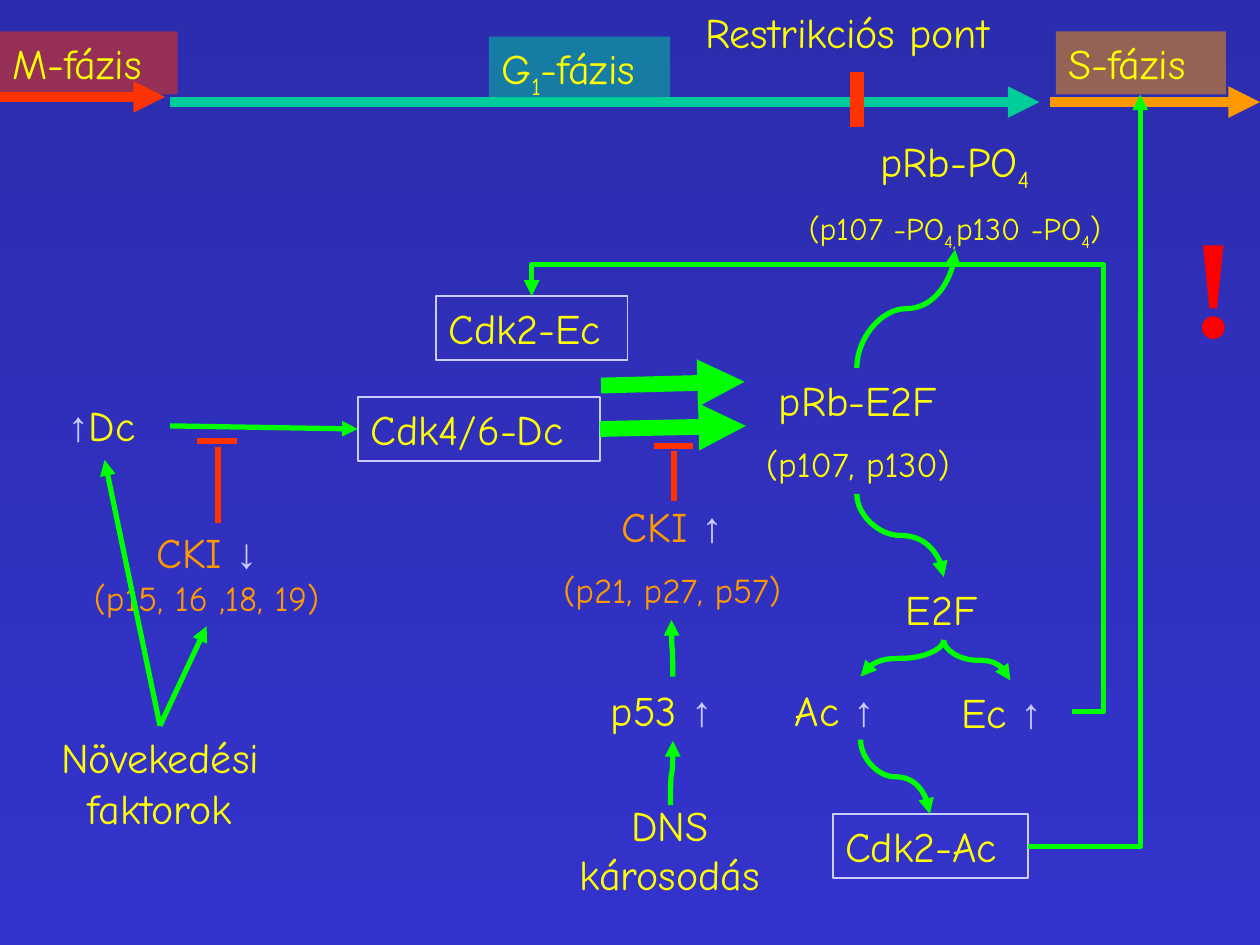
from lxml.etree import SubElement
from pptx import Presentation
from pptx.dml.color import RGBColor
from pptx.enum.shapes import MSO_CONNECTOR, MSO_SHAPE
from pptx.enum.text import MSO_ANCHOR, MSO_AUTO_SIZE, PP_ALIGN
from pptx.oxml.ns import qn
from pptx.util import Inches, Pt

YELLOW = RGBColor(0xFF, 0xFF, 0x00)
ORANGE = RGBColor(0xFF, 0x99, 0x00)
LAVENDER = RGBColor(0xCC, 0xCC, 0xFF)
GREEN = RGBColor(0x00, 0xFF, 0x00)
TEAL = RGBColor(0x00, 0xCC, 0x99)
VERMILION = RGBColor(0xFF, 0x33, 0x00)
RED = RGBColor(0xFF, 0x00, 0x00)
NIGHT_BLUE = RGBColor(0x2C, 0x2C, 0xAE)
BLUE = RGBColor(0x33, 0x33, 0xCC)

LEFT, CENTER = PP_ALIGN.LEFT, PP_ALIGN.CENTER
SUBSCRIPTS = ("1", "4", "4,")

presentation = Presentation()
presentation.slide_width = Inches(10)
presentation.slide_height = Inches(7.5)
slide = presentation.slides.add_slide(presentation.slide_layouts[6])

background = slide.background.fill
background.gradient()
background.gradient_angle = 270
for stop, color in zip(background.gradient_stops, (NIGHT_BLUE, BLUE)):
    stop.color.rgb = color


def write(shape, lines, color=YELLOW, align=LEFT, wrap=False, gap=0.5):
    """Fill a shape with (size, segments) lines; gap is in font heights.

    Up and down arrows turn lavender, the segments in SUBSCRIPTS are lowered.
    """
    frame = shape.text_frame
    frame.word_wrap = wrap
    frame.auto_size = MSO_AUTO_SIZE.SHAPE_TO_FIT_TEXT
    frame.vertical_anchor = MSO_ANCHOR.TOP
    for index, (size, segments) in enumerate(lines):
        paragraph = frame.add_paragraph() if index else frame.paragraphs[0]
        paragraph.alignment = align
        if index:
            paragraph.space_before = Pt(size * gap)
        for segment in segments:
            run = paragraph.add_run()
            run.text = segment
            is_arrow = segment in ("↑", "↓")
            run.font.size = Pt(size)
            run.font.name = "Arial" if is_arrow else "Comic Neue"
            run.font.bold = is_arrow
            run.font.color.rgb = LAVENDER if is_arrow else color
            if segment in SUBSCRIPTS:
                run.font._element.set("baseline", "-25000")


def connect(start, end, color=GREEN, width=3, kind=MSO_CONNECTOR.STRAIGHT,
            head=None, tail="triangle"):
    """Draw a connector; curves leave and arrive vertically."""
    (x1, y1), (x2, y2) = start, end
    if kind == MSO_CONNECTOR.CURVE:
        # Lay the curve on its side, then turn it by 90 degrees
        middle_x, middle_y = (x1 + x2) / 2, (y1 + y2) / 2
        half_x, half_y = (x2 - x1) / 2, (y2 - y1) / 2
        x1, y1 = middle_x - half_y, middle_y + half_x
        x2, y2 = middle_x + half_y, middle_y - half_x
    connector = slide.shapes.add_connector(
        kind, Inches(x1), Inches(y1), Inches(x2), Inches(y2))
    properties = connector._element.spPr
    if kind == MSO_CONNECTOR.CURVE:
        properties.find(qn("a:xfrm")).set("rot", str(90 * 60000))
    connector.line.color.rgb = color
    connector.line.width = Pt(width)
    for tag, arrow in (("a:headEnd", head), ("a:tailEnd", tail)):
        if arrow:
            SubElement(connector.line._get_or_add_ln(), qn(tag), type=arrow)
    SubElement(properties, qn("a:effectLst"))
    return connector


# Free labels: position, lines, colour, alignment, wrap, gap
labels = [
    ((0.53, 4.13, 2.22, 0.83), [(24, ["CKI ", "↓"]), (20, ["(p15, 16 ,18, 19)"])],
     ORANGE, CENTER, False, 0),
    ((0, 5.76, 2.54, 0.9), [(24, ["Növekedési faktorok"])], YELLOW, CENTER, True, 0),
    ((0.44, 3.12, 0.91, 0.5), [(24, ["↑", "Dc"])], YELLOW, LEFT, False, 0),
    ((5.91, 2.92, 1.8, 1), [(24, ["pRb-E2F"]), (20, ["(p107, p130)"])],
     YELLOW, CENTER, False, 0.5),
    ((7.09, 4.58, 0.82, 0.5), [(24, ["E2F"])], YELLOW, LEFT, False, 0),
    ((6.21, 5.38, 1.24, 0.5), [(24, ["Ac ", "↑"])], YELLOW, LEFT, True, 0),
    ((7.53, 5.4, 0.98, 0.5), [(24, ["Ec ", "↑"])], YELLOW, LEFT, True, 0),
    ((5.86, 1.03, 3.44, 0.95),
     [(24, ["pRb-PO", "4"]), (18, ["(p107 -PO", "4,", "p130 -PO", "4", ")"])],
     YELLOW, CENTER, True, 0.5),
    ((4.26, 3.92, 2.15, 1), [(24, ["CKI ", "↑"]), (20, ["(p21, p27, p57)"])],
     ORANGE, CENTER, False, 0.5),
    ((4.75, 5.38, 1.18, 0.5), [(24, ["p53 ", "↑"])], YELLOW, LEFT, False, 0),
    ((5.5, 0, 2.73, 0.5), [(24, ["Restrikciós pont"])], YELLOW, LEFT, False, 0),
]
for position, *content in labels:
    write(slide.shapes.add_textbox(*map(Inches, position)), *content)

damage = slide.shapes.add_textbox(Inches(4.44), Inches(6.39), Inches(1.75), Inches(0.8))
write(damage, [(24, ["DNS"]), (24, ["károsodás"])], align=CENTER, wrap=True)
for paragraph, spacing in zip(damage.text_frame.paragraphs, (0.75, 0.5)):
    paragraph.line_spacing = spacing

# Framed cyclin complexes
complexes = {}
for name, left, top, width in (("Cdk4/6-Dc", 2.84, 3.15, 1.92),
                               ("Cdk2-Ac", 6.61, 6.46, 1.55),
                               ("Cdk2-Ec", 3.46, 2.35, 1.52)):
    shape = slide.shapes.add_shape(MSO_SHAPE.RECTANGLE, Inches(left), Inches(top),
                                   Inches(width), Inches(0.51))
    shape.shadow.inherit = False
    shape.fill.background()
    shape.line.color.rgb = LAVENDER
    shape.line.width = Pt(1)
    write(shape, [(24, [name])])
    complexes[name] = shape

# Cell cycle axis with its half transparent phase boxes
for x1, x2, y, color in ((0, 1.31, 0.77, VERMILION), (1.35, 8.25, 0.81, TEAL),
                         (8.33, 10, 0.81, ORANGE)):
    connect((x1, y), (x2, y), color, 6)
for segments, left, top, width, color in ((["M-fázis"], 0, 0.25, 1.41, VERMILION),
                                          (["G", "1", "-fázis"], 3.88, 0.29, 1.44, TEAL),
                                          (["S-fázis"], 8.38, 0.25, 1.35, ORANGE)):
    shape = slide.shapes.add_shape(MSO_SHAPE.RECTANGLE, Inches(left), Inches(top),
                                   Inches(width), Inches(0.5))
    shape.shadow.inherit = False
    shape.fill.solid()
    shape.fill.fore_color.rgb = color
    SubElement(shape._element.spPr.find(qn("a:solidFill"))[0], qn("a:alpha"), val="50000")
    shape.line.fill.background()
    write(shape, [(24, segments)])

# Straight activations
connect((1.27, 5.76), (1.64, 4.97))
connect((1.27, 5.76), (0.83, 3.65))
connect((1.35, 3.38), (2.84, 3.4)).end_connect(complexes["Cdk4/6-Dc"], 1)
connect((4.78, 3.4), (5.92, 3.38), width=9).begin_connect(complexes["Cdk4/6-Dc"], 3)
connect((4.77, 3.06), (5.91, 3.03), width=9)

# Curved activations
connect((7.58, 1.98), (6.8, 2.92), kind=MSO_CONNECTOR.CURVE, head="triangle", tail=None)
for start, end in (((6.8, 3.92), (7.49, 4.58)), ((7.49, 5.08), (6.83, 5.37)),
                   ((7.49, 5.08), (8.02, 5.4)), ((6.83, 5.87), (7.38, 6.46)),
                   ((5.32, 6.39), (5.34, 5.88)), ((5.34, 5.37), (5.33, 4.92))):
    connect(start, end, kind=MSO_CONNECTOR.CURVE)

# Feedback of the cyclins, with elbows of two and four segments
for start, end, preset, adjustments in (
        ((8.16, 6.72), (9.05, 0.75), "bentConnector2", ()),
        ((8.51, 5.65), (4.22, 2.35), "bentConnector4", (-5800, 107600))):
    elbow = connect(start, end, kind=MSO_CONNECTOR.ELBOW)
    geometry = elbow._element.spPr.find(qn("a:prstGeom"))
    geometry.set("prst", preset)
    for number, value in enumerate(adjustments, 1):
        SubElement(geometry.find(qn("a:avLst")), qn("a:gd"),
                   name=f"adj{number}", fmla=f"val {value}")

# Inhibitions: a stem and a crossbar
for x, bar_y, stem_top, stem_bottom, bar_left, bar_right in (
        (1.73, 3.5, 3.55, 4.15, 1.56, 1.88), (5.35, 3.54, 3.58, 3.98, 5.19, 5.5)):
    connect((x, stem_top), (x, stem_bottom), VERMILION, tail=None)
    connect((bar_left, bar_y), (bar_right, bar_y), VERMILION, tail=None)

restriction_point = slide.shapes.add_shape(
    MSO_SHAPE.RECTANGLE, Inches(6.75), Inches(0.58), Inches(0.1), Inches(0.42))
restriction_point.shadow.inherit = False
restriction_point.fill.solid()
restriction_point.fill.fore_color.rgb = VERMILION
restriction_point.line.color.rgb = VERMILION
restriction_point.line.width = Pt(1)

warning = slide.shapes.add_textbox(Inches(9.35), Inches(1.52), Inches(0.58), Inches(1.45))
write(warning, [(80, ["!"])], RED)
warning_font = warning.text_frame.paragraphs[0].runs[0].font
warning_font.name = "Times New Roman"
warning_font.bold = True

presentation.save("out.pptx")
